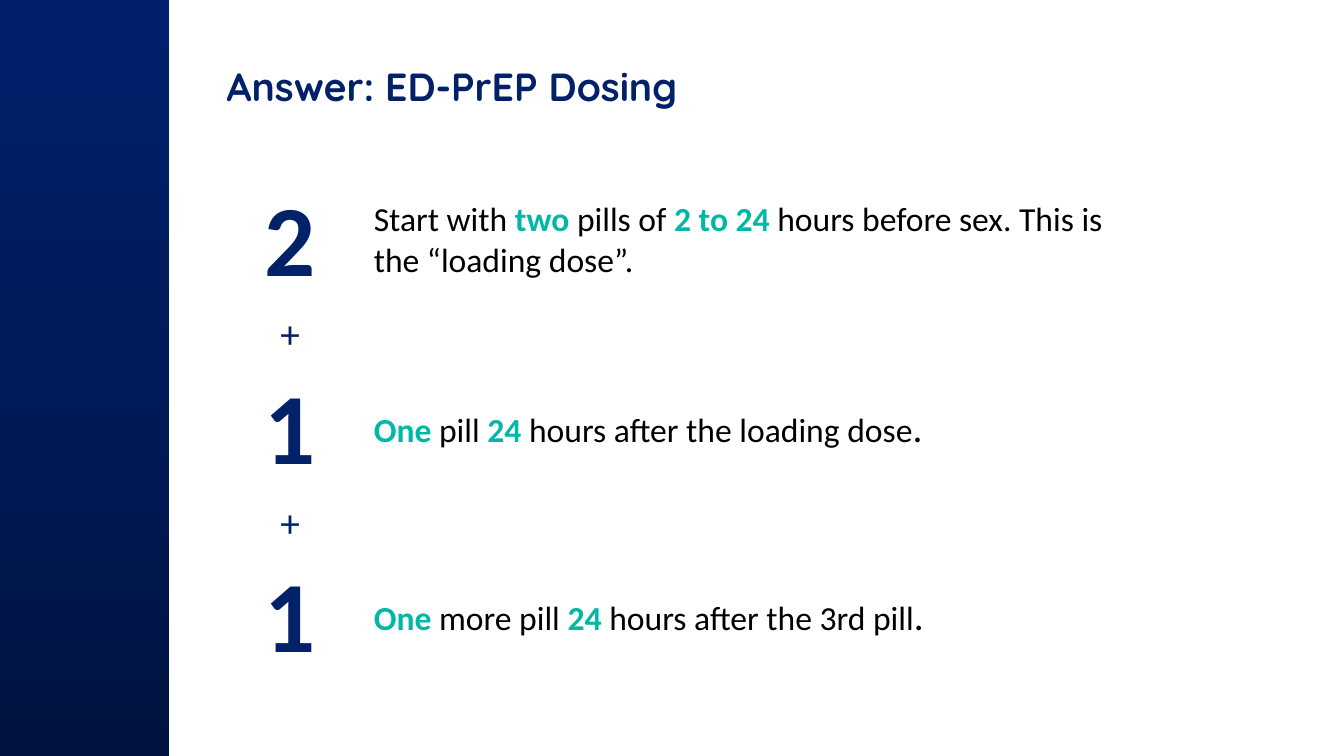
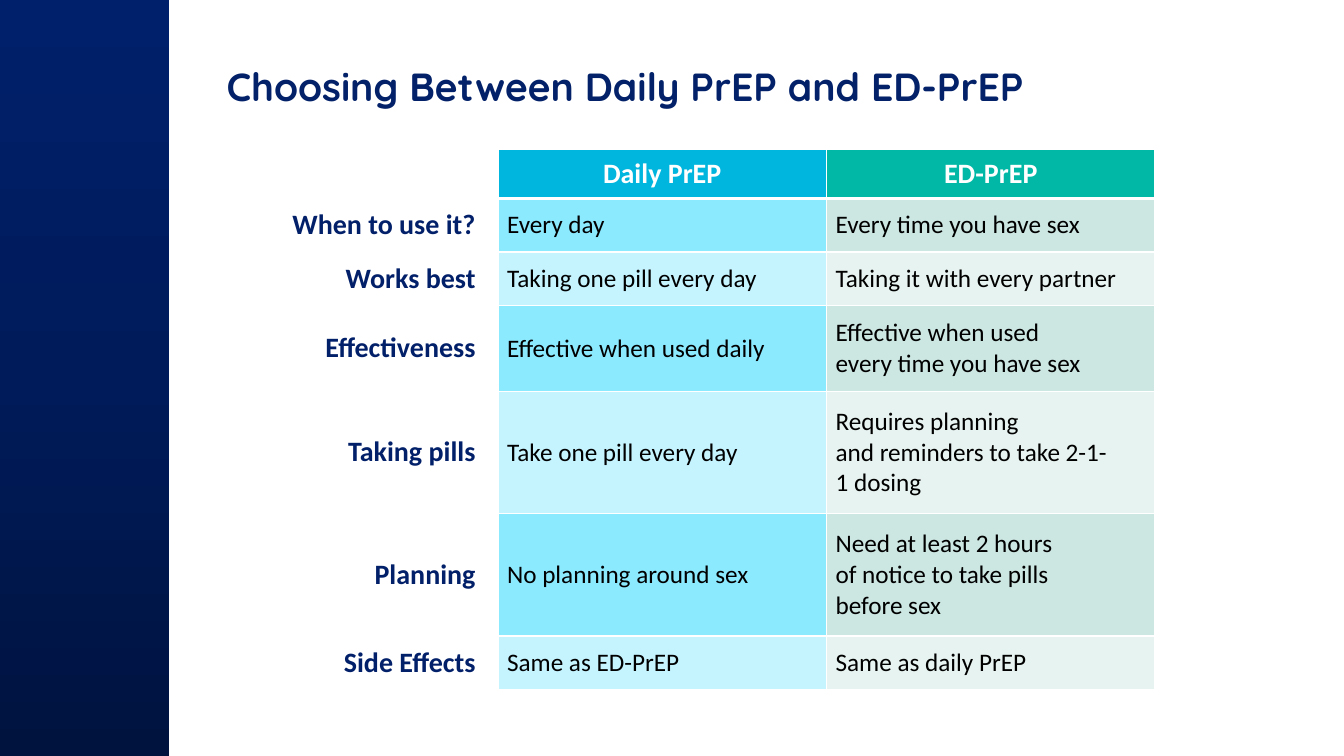
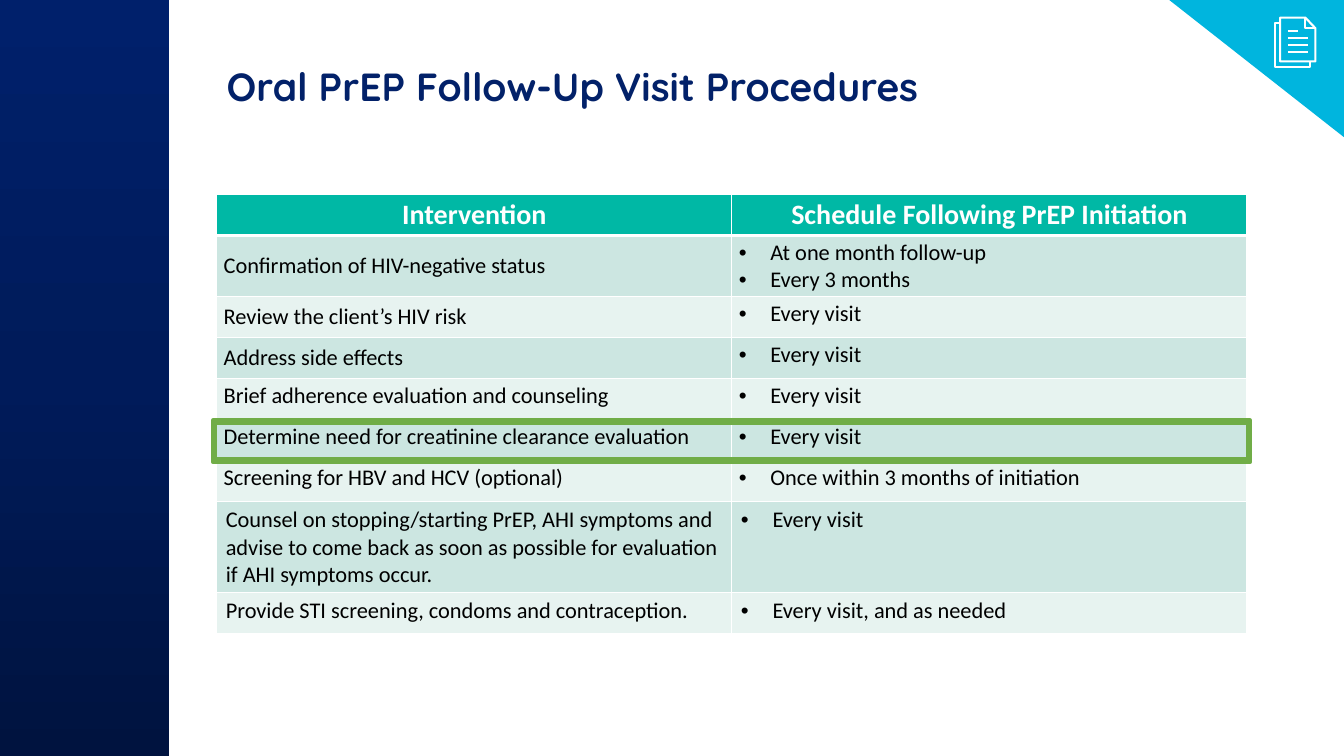
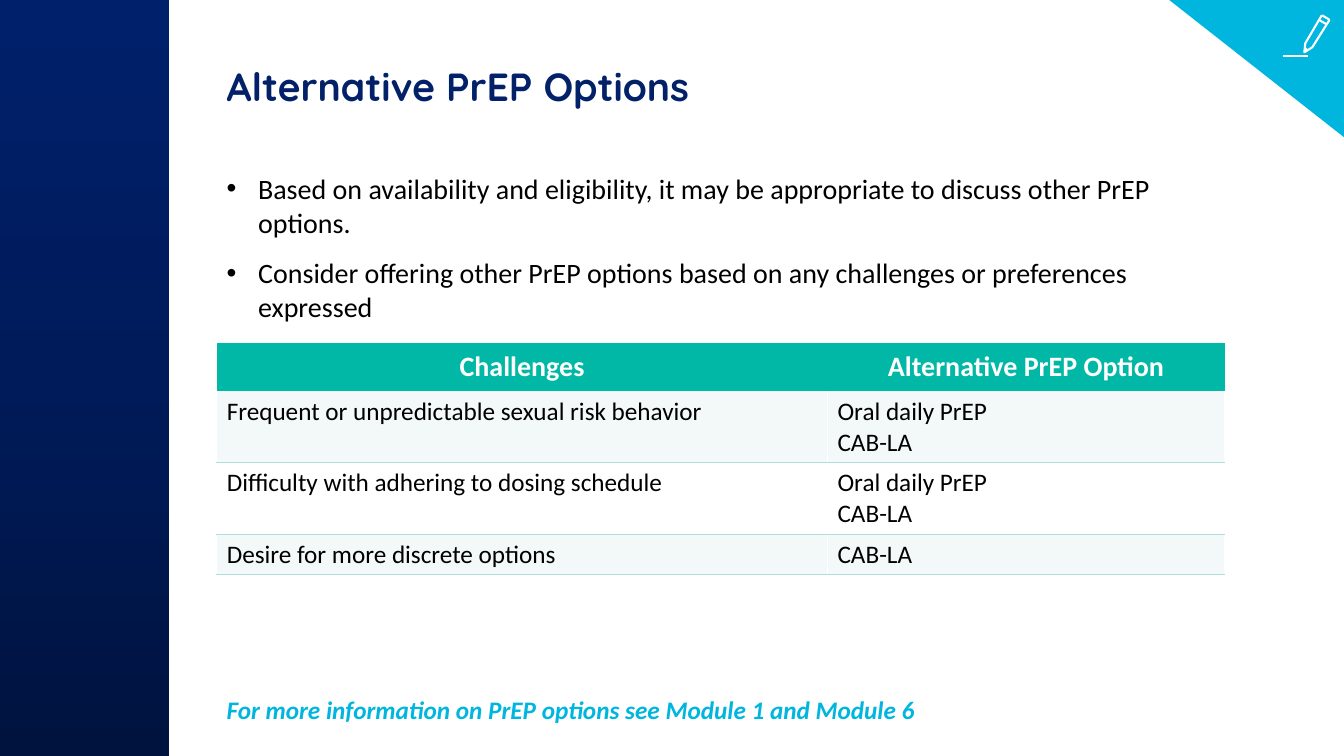
from copy import deepcopy

from lxml import etree
from pptx import Presentation
from pptx.dml.color import RGBColor
from pptx.enum import shapes, text
from pptx.oxml.ns import qn
from pptx.util import Pt

NAVY, LABEL, TEAL, CYAN = "022169", "022069", "00B8A5", "00B5DE"
WHITE, BLACK, GREEN = "FFFFFF", "000000", "70AD47"
MINT, PALE, FAINT, RULE = "CCE6E1", "E7F3F0", "F2F9F8", "B0DFDB"
SKY, ICE = "8CEAFF", "C5F4FF"
BAND = ((0, "00133F"), (0.5, "001B5A"), (1, "00206B"))
GRID = {"L": (WHITE, 1), "R": (WHITE, 1), "B": (WHITE, 1)}
HEAD = {**GRID, "B": (WHITE, 3)}
RULED = {**GRID, "B": (RULE, 0.83)}
NO_STYLE = "{2D5ABB26-0587-4C30-8999-92F81FD0307C}"
ALIGN = {"l": text.PP_ALIGN.LEFT, "c": text.PP_ALIGN.CENTER, "r": text.PP_ALIGN.RIGHT}
LEFT = 154.8
NBSP = chr(160)


def rgb(code):
    return RGBColor.from_string(code)


def paint(fill, color):
    if color:
        fill.solid()
        fill.fore_color.rgb = rgb(color)
    else:
        fill.background()


def write(frame, paras, size=18, color=BLACK, bold=False, italic=False,
          font="Calibri", align="l", bullet=False, after=0):
    """Fill a frame; a paragraph is a string or a list of (text, changes).

    A tilde stands for a space that must not break.
    """
    for i, runs in enumerate([paras] if isinstance(paras, str) else paras):
        para = frame.paragraphs[0] if i == 0 else frame.add_paragraph()
        if bullet:
            props = para._p.get_or_add_pPr()
            props.set("marL", str(Pt(22.5)))
            props.set("indent", str(-Pt(22.5)))
            etree.SubElement(props, qn("a:buFont")).set("typeface", "Arial")
            etree.SubElement(props, qn("a:buChar")).set("char", "•")
        para.alignment = ALIGN[align]
        para.space_after = Pt(after)
        for words, change in [(runs, {})] if isinstance(runs, str) else runs:
            look = {"size": size, "color": color, "bold": bold, **change}
            run = para.add_run()
            run.text = words.replace("~", NBSP)
            run.font.name = font
            run.font.size = Pt(look["size"])
            run.font.bold = look["bold"]
            run.font.italic = italic
            run.font.color.rgb = rgb(look["color"])


class Deck:
    """Holds the shared style and the current slide."""

    def __init__(self):
        self.prs = Presentation()
        self.prs.slide_width, self.prs.slide_height = Pt(960), Pt(540)
        self.slide = None

    def page(self, title):
        self.slide = self.prs.slides.add_slide(self.prs.slide_layouts[6])
        self.band()
        self.text(LEFT, 41, 720, 66, title, size=28, color=NAVY, bold=True,
                  font="Quicksand")

    def shape(self, kind, x, y, w, h, fill, line=None, width=1):
        item = self.slide.shapes.add_shape(kind, Pt(x), Pt(y), Pt(w), Pt(h))
        item.shadow.inherit = False
        paint(item.fill, fill)
        paint(item.line.fill, line)
        if line:
            item.line.width = Pt(width)
        return item

    def band(self):
        bar = self.shape(shapes.MSO_SHAPE.RECTANGLE, 0, 0, 121, 540, NAVY)
        bar.fill.gradient()
        bar.fill.gradient_angle = 90
        stops = bar._element.spPr.find(".//" + qn("a:gsLst"))
        stops.insert(1, deepcopy(stops[0]))
        for stop, (pos, color) in zip(bar.fill.gradient_stops, BAND):
            stop.position = pos
            stop.color.rgb = rgb(color)

    def corner(self):
        flap = self.shape(shapes.MSO_SHAPE.RIGHT_TRIANGLE, 835.2, 0, 124.8, 98, CYAN)
        flap.rotation = 180

    def text(self, x, y, w, h, paras, **fmt):
        frame = self.slide.shapes.add_textbox(Pt(x), Pt(y), Pt(w), Pt(h)).text_frame
        frame.word_wrap = True
        write(frame, paras, **fmt)

    def stroke(self, *points, close=False, width=1.5):
        """Draw a white line through the points."""
        pts = [(Pt(x), Pt(y)) for x, y in points]
        if len(pts) == 2:
            item = self.slide.shapes.add_connector(
                shapes.MSO_CONNECTOR.STRAIGHT, *pts[0], *pts[1])
            etree.SubElement(item._element.spPr, qn("a:effectLst"))
        else:
            build = self.slide.shapes.build_freeform(*pts[0], scale=1.0)
            build.add_line_segments(pts[1:], close=close)
            item = build.convert_to_shape()
            item.shadow.inherit = False
            item.fill.background()
        paint(item.line.fill, WHITE)
        item.line.width = Pt(width)

    def table(self, x, y, cols, rows):
        item = self.slide.shapes.add_table(
            len(rows), len(cols), Pt(x), Pt(y), Pt(sum(cols)), Pt(sum(rows)))
        grid = item.table
        grid.first_row = grid.horz_banding = False
        grid._tbl.tblPr.find(qn("a:tableStyleId")).text = NO_STYLE
        for col, w in zip(grid.columns, cols):
            col.width = Pt(w)
        for row, h in zip(grid.rows, rows):
            row.height = Pt(h)
        return grid

    def cell(self, cell, paras, fill=None, edges=None, mid=True, pad=(7.2, 3.6),
             right=None, **fmt):
        props = cell._tc.get_or_add_tcPr()
        for side, (color, width) in (edges or {}).items():
            line = etree.SubElement(props, qn("a:ln" + side), w=str(Pt(width)))
            solid = etree.SubElement(line, qn("a:solidFill"))
            etree.SubElement(solid, qn("a:srgbClr"), val=color)
        paint(cell.fill, fill)
        cell.margin_left, cell.margin_right = Pt(pad[0]), Pt(right or pad[0])
        cell.margin_top = cell.margin_bottom = Pt(pad[1])
        cell.vertical_anchor = text.MSO_ANCHOR.MIDDLE if mid else text.MSO_ANCHOR.TOP
        write(cell.text_frame, paras, **fmt)

    def head(self, cell, words, fill=TEAL, edges=None, **fmt):
        self.cell(cell, words, fill, edges, size=20, color=WHITE, bold=True,
                  align="c", **fmt)


def dosing(deck):
    deck.page("Answer: ED-PrEP Dosing")
    key, dot = {"color": TEAL, "bold": True}, (".", {"size": 28})
    steps = [
        ("2", [("Start with ", {}), ("two ", key), ("pills of ", {}), ("2 to 24~", key),
               ("hours before sex. This is the “loading dose”.", {})]),
        ("+", None),
        ("1", [("One", key), (" pill ", {}), ("24 ", key),
               ("hours after the loading dose", {}), dot]),
        ("+", None),
        ("1", [("One ", key), ("more pill ", {}), ("24 ", key),
               ("hours after the 3rd pill", {}), dot]),
    ]
    grid = deck.table(LEFT, 125.3, [105, 561], [80.6, 36, 67.7, 36, 67.7])
    for r, (mark, runs) in enumerate(steps):
        deck.cell(grid.cell(r, 0), mark, mid=False, size=72 if runs else 28,
                  color=NAVY, bold=bool(runs), align="c")
        deck.cell(grid.cell(r, 1), [runs] if runs else [], size=24)


def choosing(deck):
    deck.page("Choosing Between Daily PrEP and ED-PrEP")
    rows = [
        ("When to use it?", "Every day", "Every time you have sex"),
        ("Works best", "Taking one pill every day", "Taking it with every partner"),
        ("Effectiveness", "Effective when used daily",
         "Effective when used every~time you have sex"),
        ("Taking pills", "Take one pill every day",
         "Requires planning and~reminders to take 2-1-1~dosing"),
        ("Planning", "No planning around sex",
         "Need at least 2 hours of~notice to take pills before~sex"),
        ("Side Effects", "Same as ED-PrEP", "Same as daily PrEP"),
    ]
    grid = deck.table(121, 107.3, [234.7] * 3, [34.6, 38.2, 38.2, 61.2, 87.4, 87.4, 38.2])
    pad = (6.5, 3)
    deck.cell(grid.cell(0, 0), [])
    deck.head(grid.cell(0, 1), "Daily PrEP", CYAN, HEAD, pad=pad)
    deck.head(grid.cell(0, 2), "ED-PrEP", TEAL, HEAD, pad=pad)
    for r, (label, daily, event) in enumerate(rows, 1):
        deck.cell(grid.cell(r, 0), label, pad=pad, right=16, size=20, color=LABEL,
                  bold=True, align="r")
        fills = (SKY, MINT) if r % 2 else (ICE, PALE)
        for c, (words, fill) in enumerate(zip((daily, event), fills), 1):
            deck.cell(grid.cell(r, c), words, fill, GRID, pad=pad)


def visits(deck):
    deck.page("Oral PrEP Follow-Up Visit Procedures")
    deck.corner()
    deck.stroke((914.4, 12.6), (932.4, 12.6), (939.6, 20.2), (939.6, 43.9),
                (914.4, 43.9), close=True)
    deck.stroke((932.4, 12.6), (932.4, 20.2), (939.6, 20.2))
    deck.stroke((914.4, 16.6), (910.8, 16.6), (910.8, 47.9), (936, 47.9), (936, 43.9))
    for i in range(4):
        y = 22 + 5 * i
        deck.stroke((920, y), (934 if i else 927, y))
    rows = [
        ("Confirmation of HIV-negative status", ["At one month follow-up", "Every 3 months"]),
        ("Review the client’s HIV risk", "Every visit"),
        ("Address side effects", "Every visit"),
        ("Brief adherence evaluation and counseling", "Every visit"),
        ("Determine need for creatinine clearance evaluation", "Every visit"),
        ("Screening for HBV and HCV (optional)", "Once within 3 months of initiation"),
        ("Counsel on stopping/starting PrEP, AHI symptoms and advise to come back "
         "as soon as possible for evaluation if AHI symptoms occur.", "Every visit"),
        ("Provide STI screening, condoms and contraception.", "Every visit, and as needed"),
    ]
    grid = deck.table(LEFT, 139, [368] * 2, [29.3] * 9)
    for c, words in enumerate(("Intervention", "Schedule Following PrEP Initiation")):
        deck.head(grid.cell(0, c), words, edges=HEAD, pad=(5, 2.6))
    for r, (task, times) in enumerate(rows, 1):
        look = {"fill": MINT if r % 2 else PALE, "edges": GRID, "size": 16,
                "pad": (5, 2.6) if r < 7 else (6.5, 3.6)}
        deck.cell(grid.cell(r, 0), task, mid=r < 4, **look)
        deck.cell(grid.cell(r, 1), times, mid=False, bullet=True, **look)
    frame = deck.shape(shapes.MSO_SHAPE.FRAME, 152, 300.3, 741, 29.5, GREEN, GREEN, 3)
    frame.adjustments[0] = 0.06


def options(deck):
    deck.page("Alternative PrEP Options")
    deck.text(LEFT, 119, 720, 120, [
        "Based on availability and eligibility, it may be appropriate to discuss "
        "other PrEP options.",
        "Consider offering other PrEP options based on any challenges or preferences "
        "expressed",
    ], size=20, bullet=True, after=12)
    both = ["Oral daily PrEP", "CAB-LA"]
    rows = [
        ("Frequent or unpredictable sexual risk behavior", both),
        ("Difficulty with adhering to dosing schedule", both),
        ("Desire for more discrete options", "CAB-LA"),
    ]
    grid = deck.table(LEFT, 245, [436.3, 283.7], [34.6, 51, 51, 29])
    for c, words in enumerate(("Challenges", "Alternative PrEP Option")):
        deck.head(grid.cell(0, c), words)
    for r, row in enumerate(rows, 1):
        for c, words in enumerate(row):
            deck.cell(grid.cell(r, c), words, FAINT if r % 2 else WHITE, RULED, mid=False)
    deck.text(LEFT, 492.5, 692, 29, "For more information on PrEP options see "
              "Module 1 and Module 6", color=CYAN, bold=True, italic=True)
    deck.corner()
    deck.stroke((937.4, 33.8), (931.7, 37.4), (932.4, 31), (943.9, 11.4), (944.8, 11.2),
                (949, 13.7), (949.5, 14.6), close=True)
    deck.stroke((942.5, 14.4), (947.5, 17.3))
    deck.stroke((932.4, 34.6), (933.8, 36))
    deck.stroke((916.6, 40.3), (934.6, 40.3))


def main():
    deck = Deck()
    for build in (dosing, choosing, visits, options):
        build(deck)
    deck.prs.save("out.pptx")


if __name__ == "__main__":
    main()
